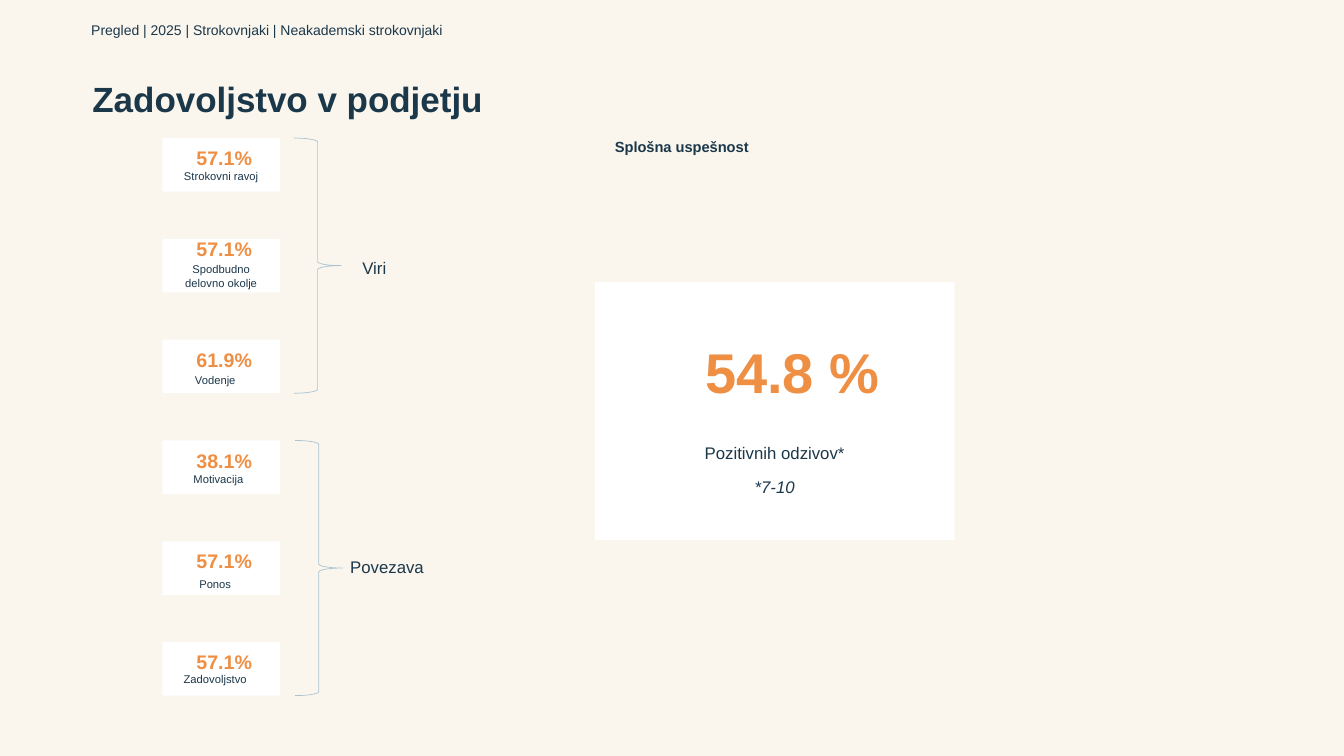
import pptx
import pptx.dml.color
import pptx.enum.shapes
import pptx.enum.text
import pptx.util
from dataclasses import dataclass

Cm = pptx.util.Cm
ALIGN = pptx.enum.text.PP_ALIGN
ANCHOR = pptx.enum.text.MSO_ANCHOR
SHAPE = pptx.enum.shapes.MSO_SHAPE


@dataclass(frozen=True)
class Theme:
    font: str = "Arial"
    background: str = "FAF6ED"
    card: str = "FFFFFF"
    ink: str = "1B374A"
    accent: str = "EE8F44"
    brace: str = "ABC4D3"
    title: float = 25
    headline: float = 40
    score: float = 14
    body: float = 12
    subtitle: float = 10.5
    header: float = 10
    label: float = 8


THEME = Theme()
CARD_LEFT, CARD_TOP, CARD_WIDTH, CARD_HEIGHT = 4.09, 3.48, 2.97, 1.35
ROW_STEP = 2.54
LABEL_INSET = 0.51

SCORES = [
    ("57.1%", 0.2, "Strokovni ravoj", 0, 0.79),
    ("57.1%", -0.05, "Spodbudno delovno okolje", 0, 0.6),
    ("61.9%", 0.2, "Vodenje", -0.15, 0.85),
    ("38.1%", 0.2, "Motivacija", -0.07, 0.81),
    ("57.1%", 0.2, "Ponos", -0.15, 0.91),
    ("57.1%", 0.2, "Zadovoljstvo", -0.15, 0.77),
]


def rgb(value):
    return pptx.dml.color.RGBColor.from_string(value)


def add_text(slide, box, lines, size, color=THEME.ink, bold=False, align=ALIGN.LEFT,
             anchor=ANCHOR.TOP, side_inset=0, spacing=None, wrap=True):
    frame = slide.shapes.add_textbox(*map(Cm, box)).text_frame
    frame.word_wrap = wrap
    frame.vertical_anchor = anchor
    frame.margin_left = frame.margin_right = Cm(side_inset)
    frame.margin_top = frame.margin_bottom = 0
    frame.text = "\n".join(lines)
    for paragraph in frame.paragraphs:
        paragraph.alignment = align
        paragraph.line_spacing = spacing
        paragraph.font.name = THEME.font
        paragraph.font.size = pptx.util.Pt(size)
        paragraph.font.bold = bold
        paragraph.font.color.rgb = rgb(color)
    return frame


def add_label(slide, box, lines, size):
    return add_text(slide, box, lines, size, align=ALIGN.CENTER, side_inset=LABEL_INSET)


def add_heading(slide, box, text, size, bold=True, align=ALIGN.LEFT):
    add_text(slide, box, [text], size, bold=bold, align=align,
             anchor=ANCHOR.MIDDLE, spacing=0.9)


def add_number(slide, box, text, size):
    add_text(slide, box, [text], size, THEME.accent, bold=True, wrap=False)


def add_card(slide, box):
    card = slide.shapes.add_shape(SHAPE.ROUNDED_RECTANGLE, *map(Cm, box))
    card.adjustments[0] = 0
    card.shadow.inherit = False
    card.fill.solid()
    card.fill.fore_color.rgb = rgb(THEME.card)
    card.line.fill.background()


def add_brace(slide, box):
    brace = slide.shapes.add_shape(SHAPE.RIGHT_BRACE, *map(Cm, box))
    brace.shadow.inherit = False
    brace.fill.background()
    brace.line.color.rgb = rgb(THEME.brace)
    brace.line.width = pptx.util.Pt(0.5)


def add_score(slide, row, score, score_drop, label, label_shift, label_drop):
    top = CARD_TOP + row * ROW_STEP
    add_card(slide, (CARD_LEFT, top, CARD_WIDTH, CARD_HEIGHT))
    label_box = (CARD_LEFT + label_shift, top + label_drop,
                 CARD_WIDTH, CARD_HEIGHT - label_drop)
    add_label(slide, label_box, [label], THEME.label)
    add_number(slide, (4.95, top + score_drop, 1.5, 0.6), score, THEME.score)


def add_group(slide, first_row, brace_left, name, name_box):
    height = 2 * ROW_STEP + CARD_HEIGHT
    add_brace(slide, (brace_left, CARD_TOP + first_row * ROW_STEP, 1.19, height))
    add_label(slide, name_box, [name], THEME.body)


def add_overall(slide):
    add_card(slide, (14.99, 7.11, 9.07, 6.5))
    caption = add_label(slide, (14.99, 11.15, 9.07, 2.46),
                        ["Pozitivnih odzivov*", "*7-10"], THEME.body)
    scale_note = caption.paragraphs[1]
    scale_note.space_before = pptx.util.Pt(10)
    scale_note.font.italic = True
    add_number(slide, (17.77, 8.51, 4.45, 1.65), "54.8 %", THEME.headline)


def main():
    deck = pptx.Presentation()
    deck.slide_width, deck.slide_height = Cm(33.87), Cm(19.05)
    slide = deck.slides.add_slide(deck.slide_layouts[6])
    slide.background.fill.solid()
    slide.background.fill.fore_color.rgb = rgb(THEME.background)

    add_heading(slide, (2.3, 0, 31.57, 1.55),
                "Pregled | 2025 | Strokovnjaki | Neakademski strokovnjaki",
                THEME.header, bold=False)
    add_heading(slide, (2.33, 1.55, 29.21, 2.01), "Zadovoljstvo v podjetju", THEME.title)
    add_heading(slide, (2.58, 2.72, 29.21, 2.01), "Splošna uspešnost",
                THEME.subtitle, align=ALIGN.CENTER)
    for row, score in enumerate(SCORES):
        add_score(slide, row, *score)
    add_group(slide, 0, 7.41, "Viri", (8.38, 6.5, 2.11, 0.6))
    add_group(slide, 3, 7.44, "Povezava", (8.22, 14.04, 3.07, 0.6))
    add_overall(slide)
    deck.save("out.pptx")


if __name__ == "__main__":
    main()
